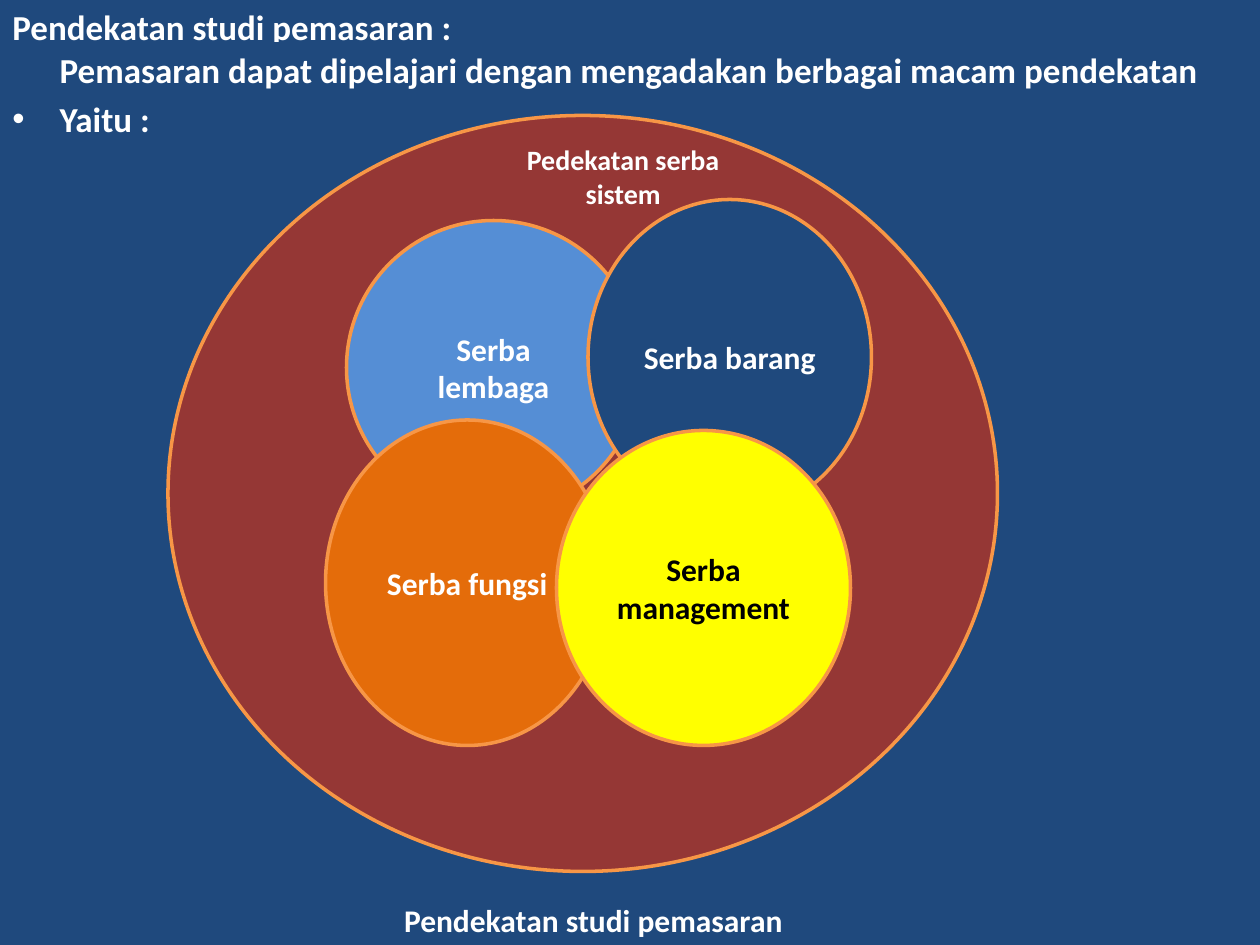
from pptx import Presentation
from pptx.dml.color import RGBColor
from pptx.enum.shapes import MSO_SHAPE as SHAPE
from pptx.enum.text import MSO_ANCHOR as ANCHOR, MSO_AUTO_SIZE as AUTO, PP_ALIGN as ALIGN
from pptx.oxml.ns import qn
from pptx.util import Pt
from lxml.etree import SubElement

PX = 914400 // 120
NAVY, WHITE, BLACK = "1F497D", "FFFFFF", "000000"


def px(n):
    return n * PX


def rgb(value):
    return RGBColor.from_string(value)


def write(tf, text, size=18, color=WHITE, align=ALIGN.LEFT, first=True,
          underline=False, before=0, margin=0, bullet=None):
    p = tf.paragraphs[0] if first else tf.add_paragraph()
    p.alignment, p.space_before = align, Pt(before)
    r = p.add_run()
    r.text = text
    font = r.font
    font.name, font.size, font.bold = "Calibri", Pt(size), True
    font.underline, font.color.rgb = underline, rgb(color)
    pPr = p._p.get_or_add_pPr()
    pPr.set("marL", str(px(margin)))
    pPr.set("indent", str(px(-margin if bullet else 0)))
    if bullet:
        SubElement(pPr, qn("a:buFont")).set("typeface", "Arial")
        SubElement(pPr, qn("a:buChar")).set("char", bullet)
    return p


class Canvas:
    """Draws the elements of the current slide in one shared style."""

    outline = "F79646"

    def __init__(self, slide):
        self.s = slide

    def shape(self, kind, box, fill, anchor=ANCHOR.MIDDLE):
        sp = self.s.shapes.add_shape(kind, *map(px, box))
        sp.shadow.inherit = False
        sp.fill.solid()
        sp.fill.fore_color.rgb = rgb(fill)
        sp.text_frame.word_wrap = True
        sp.text_frame.vertical_anchor = anchor
        return sp

    def panel(self, box, anchor):
        sp = self.shape(SHAPE.RECTANGLE, box, NAVY, anchor)
        sp.line.fill.background()
        return sp.text_frame

    def circle(self, box, fill, text=None, color=WHITE):
        sp = self.shape(SHAPE.OVAL, box, fill)
        sp.line.color.rgb = rgb(self.outline)
        sp.line.width = Pt(2)
        if text:
            write(sp.text_frame, text, color=color, align=ALIGN.CENTER)

    def label(self, box):
        tf = self.s.shapes.add_textbox(*map(px, box)).text_frame
        tf.word_wrap = False
        tf.auto_size = AUTO.SHAPE_TO_FIT_TEXT
        return tf


def main():
    prs = Presentation()
    prs.slide_width, prs.slide_height = px(1200), px(900)
    canvas = Canvas(prs.slides.add_slide(prs.slide_layouts[6]))

    title = canvas.panel((0, 0, 1200, 50), ANCHOR.MIDDLE)
    write(title, "Pendekatan studi pemasaran :", size=20, underline=True)

    body = canvas.panel((0, 40, 1200, 860), ANCHOR.TOP)
    intro = "Pemasaran dapat dipelajari dengan mengadakan berbagai macam pendekatan"
    write(body, intro, size=20, before=4, margin=45)
    write(body, "Yaitu :", size=20, before=4, margin=45, bullet="•", first=False)

    for circle in (
        ((160, 110, 790, 720), "953735"),
        ((330, 210, 280, 280), "558ED5", "Serba lembaga"),
        ((310, 400, 270, 310), "E46C0A", "Serba fungsi"),
        ((560, 190, 270, 300), NAVY, "Serba barang"),
        ((530, 410, 280, 300), "FFFF00", "Serba management", BLACK),
    ):
        canvas.circle(*circle)

    system = canvas.label((490, 130, 216, 77))
    write(system, "Pedekatan serba", size=16)
    write(system, "sistem", size=16, align=ALIGN.CENTER, first=False)
    write(canvas.label((373, 852, 402, 48)), "Pendekatan studi pemasaran")

    prs.save("out.pptx")


if __name__ == "__main__":
    main()
